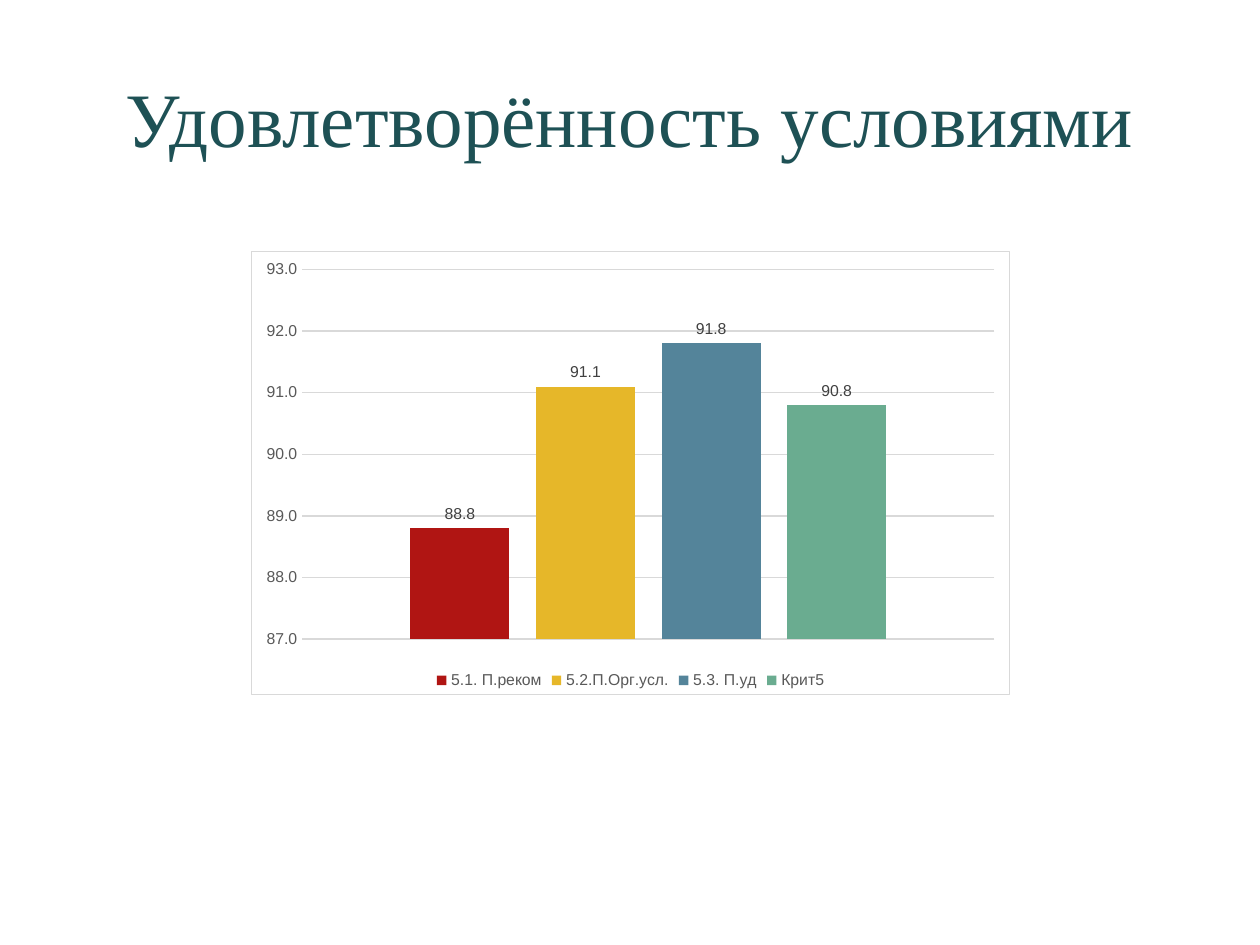
from dataclasses import dataclass

from lxml import etree
from pptx import Presentation
from pptx.chart.data import CategoryChartData
from pptx.dml.color import RGBColor
from pptx.enum.chart import XL_CHART_TYPE, XL_LABEL_POSITION, XL_LEGEND_POSITION, XL_TICK_MARK
from pptx.enum.text import MSO_ANCHOR, PP_ALIGN
from pptx.oxml import parse_xml
from pptx.util import Pt

COLUMNS = XL_CHART_TYPE.COLUMN_CLUSTERED
OUTSIDE_END = XL_LABEL_POSITION.OUTSIDE_END
LEGEND_BOTTOM = XL_LEGEND_POSITION.BOTTOM
NO_TICKS = XL_TICK_MARK.NONE
MIDDLE = MSO_ANCHOR.MIDDLE
CENTER = PP_ALIGN.CENTER


@dataclass(frozen=True)
class Theme:
    title_font: str = "Times New Roman"
    chart_font: str = "Arial"
    title_size: int = 44
    chart_size: int = 10
    small_size: int = 9
    title: str = "1E5155"
    text: str = "000000"
    axis: str = "595959"
    label: str = "404040"
    line: str = "D9D9D9"
    line_width: float = 0.75


THEME = Theme()
NUMBER_FORMAT = "0.0"
SATISFACTION = [
    ("5.1. П.реком", 88.8, "B01513"),
    ("5.2.П.Орг.усл.", 91.1, "E6B729"),
    ("5.3. П.уд", 91.8, "54849A"),
    ("Крит5", 90.8, "6AAC90"),
]


def format_font(font, name, size, color):
    font.name = name
    font.size = Pt(size)
    font.color.rgb = RGBColor.from_string(color)


def add_title(slide, text):
    sp = slide.shapes.title
    sp.left, sp.top, sp.width, sp.height = Pt(36), Pt(21.6), Pt(648), Pt(90)
    tf = sp.text_frame
    tf.text = text
    tf.vertical_anchor = MIDDLE
    p = tf.paragraphs[0]
    p.alignment = CENTER
    format_font(p.font, THEME.title_font, THEME.title_size, THEME.title)


def add_border(chart):
    """Outline the whole chart area, which python-pptx does not expose."""
    chart_space = chart.element
    sp_pr = parse_xml(
        '<c:spPr xmlns:c="http://schemas.openxmlformats.org/drawingml/2006/chart"'
        ' xmlns:a="http://schemas.openxmlformats.org/drawingml/2006/main">'
        f'<a:noFill/><a:ln w="{Pt(THEME.line_width)}"><a:solidFill>'
        f'<a:srgbClr val="{THEME.line}"/></a:solidFill></a:ln></c:spPr>'
    )
    plot_part = chart_space.find(etree.QName(sp_pr.nsmap["c"], "chart").text)
    plot_part.addnext(sp_pr)


def format_axes(chart):
    chart.category_axis.visible = False
    axis = chart.value_axis
    axis.minimum_scale, axis.maximum_scale, axis.major_unit = 87, 93, 1
    axis.major_tick_mark = axis.minor_tick_mark = NO_TICKS
    axis.format.line.fill.background()
    grid = axis.major_gridlines.format.line
    grid.color.rgb = RGBColor.from_string(THEME.line)
    grid.width = Pt(THEME.line_width)
    axis.tick_labels.number_format = NUMBER_FORMAT
    axis.tick_labels.number_format_is_linked = False
    format_font(axis.tick_labels.font, THEME.chart_font, THEME.small_size, THEME.axis)


def format_series(series, color):
    series.format.fill.solid()
    series.format.fill.fore_color.rgb = RGBColor.from_string(color)
    labels = series.data_labels
    labels.show_value = True
    labels.position = OUTSIDE_END
    labels.number_format = NUMBER_FORMAT
    labels.number_format_is_linked = False
    format_font(labels.font, THEME.chart_font, THEME.small_size, THEME.label)


def add_column_chart(slide, rows):
    data = CategoryChartData(number_format=NUMBER_FORMAT)
    data.categories = ["1"]
    for name, value, _ in rows:
        data.add_series(name, [value])
    chart = slide.shapes.add_chart(
        COLUMNS, Pt(143.3), Pt(143.3), Pt(434), Pt(254), data
    ).chart
    format_font(chart.font, THEME.chart_font, THEME.chart_size, THEME.text)
    chart.has_title = False
    chart.has_legend = True
    chart.legend.position = LEGEND_BOTTOM
    chart.legend.include_in_layout = False
    format_font(chart.legend.font, THEME.chart_font, THEME.small_size, THEME.axis)
    plot = chart.plots[0]
    plot.gap_width, plot.overlap = 219, -27
    plot.vary_by_categories = False
    for series, (_, _, color) in zip(plot.series, rows):
        format_series(series, color)
    format_axes(chart)
    add_border(chart)


def main():
    prs = Presentation()
    prs.slide_width, prs.slide_height = Pt(720), Pt(540)
    slide = prs.slides.add_slide(prs.slide_layouts[5])
    add_title(slide, "Удовлетворённость условиями")
    add_column_chart(slide, SATISFACTION)
    prs.save("out.pptx")


if __name__ == "__main__":
    main()
